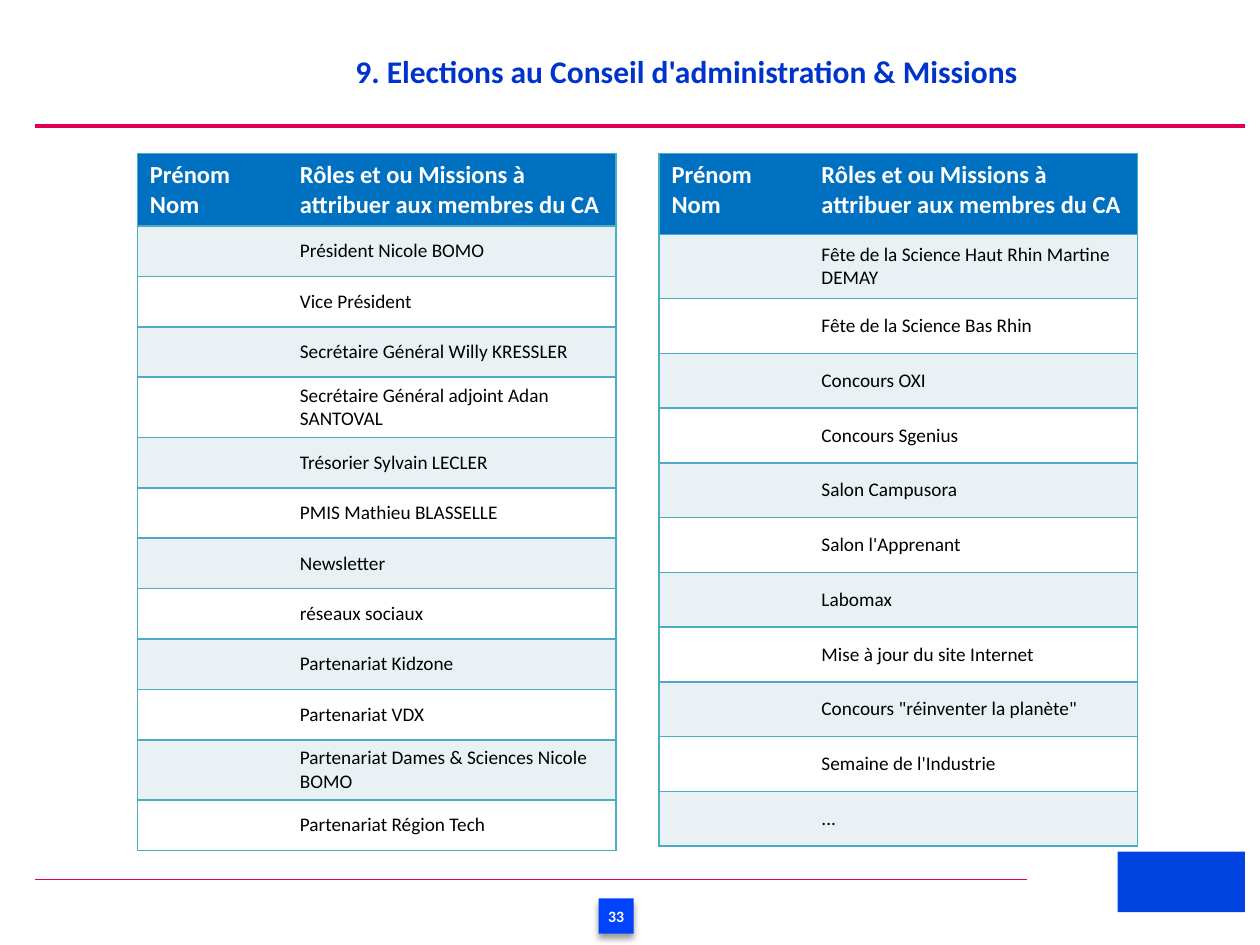
from lxml.etree import SubElement
from pptx import Presentation
from pptx.dml.color import RGBColor
from pptx.enum.shapes import MSO_CONNECTOR, MSO_SHAPE
from pptx.enum.text import MSO_ANCHOR, PP_ALIGN
from pptx.oxml.ns import qn
from pptx.util import Inches, Pt

# The slide is a grid of 100 columns and 75 rows
UNIT = 0.1
FONT = "Calibri"
HUES = {
    "title": "0033CC", "rule": "E00053", "badge": "0043FA", "mark": "0043E1",
    "head": "0070C0", "band": "E9F1F5", "white": "FFFFFF", "text": "000000",
    "edge": "4BACC6",
}

HEAD = ("Prénom Nom", "Rôles et ou Missions à attribuer aux membres du CA")
OFFICE = [
    "Président Nicole BOMO", "Vice Président", "Secrétaire Général Willy KRESSLER",
    "Secrétaire Général adjoint Adan SANTOVAL", "Trésorier Sylvain LECLER",
    "PMIS Mathieu BLASSELLE", "Newsletter", "réseaux sociaux",
    "Partenariat Kidzone", "Partenariat VDX",
    "Partenariat Dames &\u00a0Sciences Nicole BOMO", "Partenariat Région Tech",
]
EVENTS = [
    "Fête de la Science Haut Rhin Martine DEMAY", "Fête de la Science Bas Rhin",
    "Concours OXI", "Concours Sgenius", "Salon Campusora", "Salon l'Apprenant",
    "Labomax", "Mise à jour du site Internet",
    "Concours \"réinventer la planète\"", "Semaine de l'Industrie", "...",
]


def grid(*cells):
    return [Inches(n * UNIT) for n in cells]


def hue(name):
    return RGBColor.from_string(HUES[name])


def style(para, size, color, bold=False):
    font = para.font
    font.name, font.size, font.bold = FONT, Pt(size), bold
    font.color.rgb = hue(color)


def add_title(slide, text):
    title = slide.shapes.title
    title.left, title.top, title.width, title.height = grid(27.2, 3.2, 57.1, 4.3)
    frame = title.text_frame
    frame.text = text
    frame.vertical_anchor = MSO_ANCHOR.TOP
    para = frame.paragraphs[0]
    para.alignment = PP_ALIGN.LEFT
    para.line_spacing = 1.15
    style(para, 18, "title", True)


def add_rule(slide, row, end, width):
    left, top, right = grid(2.8, row, end)
    line = slide.shapes.add_connector(MSO_CONNECTOR.STRAIGHT, left, top, right, top)
    line.line.color.rgb = hue("rule")
    line.line.width = Pt(width)
    SubElement(line._element.spPr, qn("a:effectLst"))


def add_box(slide, area, color):
    box = slide.shapes.add_shape(MSO_SHAPE.RECTANGLE, *grid(*area))
    box.fill.solid()
    box.fill.fore_color.rgb = hue(color)
    box.line.fill.background()
    box.shadow.inherit = False
    return box


def add_badge(slide, text):
    box = add_box(slide, (47.5, 71.3, 2.8, 2.8), "badge")
    # Soft shadow straight below
    effect = box._element.spPr.find(qn("a:effectLst"))
    shade = SubElement(effect, qn("a:outerShdw"), blurRad=str(Pt(4)),
                       dist=str(Pt(3)), dir="5400000", rotWithShape="0")
    black = SubElement(shade, qn("a:srgbClr"), val="000000")
    SubElement(black, qn("a:alpha"), val="40000")
    frame = box.text_frame
    frame.margin_left = frame.margin_right = frame.margin_top = frame.margin_bottom = 0
    frame.vertical_anchor = MSO_ANCHOR.MIDDLE
    frame.text = text
    para = frame.paragraphs[0]
    para.alignment = PP_ALIGN.CENTER
    style(para, 9, "white", True)


def add_edges(cell, open_side):
    props = cell._tc.get_or_add_tcPr()
    for side in "LRTB":
        line = SubElement(props, qn(f"a:ln{side}"), w=str(Pt(1)))
        if side == open_side:
            SubElement(line, qn("a:noFill"))
        else:
            fill = SubElement(line, qn("a:solidFill"))
            SubElement(fill, qn("a:srgbClr"), val=HUES["edge"])


def fill_cell(cell, text, row, col):
    add_edges(cell, "LR"[1 - col])
    cell.fill.solid()
    cell.fill.fore_color.rgb = hue(("white", "band")[row % 2] if row else "head")
    cell.text = text
    para = cell.text_frame.paragraphs[0]
    if row:
        cell.vertical_anchor = MSO_ANCHOR.MIDDLE
        style(para, 11, "text")
    else:
        style(para, 14, "white", True)


def add_roles(slide, left, roles, heights):
    rows = [HEAD] + [("", role) for role in roles]
    area = grid(left, 12.2, 38, sum(heights))
    table = slide.shapes.add_table(len(rows), 2, *area).table
    for column, width in zip(table.columns, grid(11.9, 26.1)):
        column.width = width
    for r, (texts, height) in enumerate(zip(rows, grid(*heights))):
        table.rows[r].height = height
        for c, text in enumerate(texts):
            fill_cell(table.cell(r, c), text, r, c)


def main():
    deck = Presentation()
    deck.slide_width, deck.slide_height = grid(100, 75)
    slide = deck.slides.add_slide(deck.slide_layouts[5])

    # Page frame: rules, page number, plain block in the corner
    add_rule(slide, 69.8, 81.5, 0.75)
    add_rule(slide, 10, 98.8, 1.75)
    add_badge(slide, "33")
    add_box(slide, (88.7, 67.6, 10.1, 4.8), "mark")

    # Title and the two tables of roles
    add_title(slide, "9. Elections au Conseil d'administration & Missions")
    add_roles(slide, 10.9, OFFICE, [3.3] + [4] * len(OFFICE))
    add_roles(slide, 52.3, EVENTS, [6.4, 5.1] + [4.35] * (len(EVENTS) - 1))

    deck.save("out.pptx")


if __name__ == "__main__":
    main()
